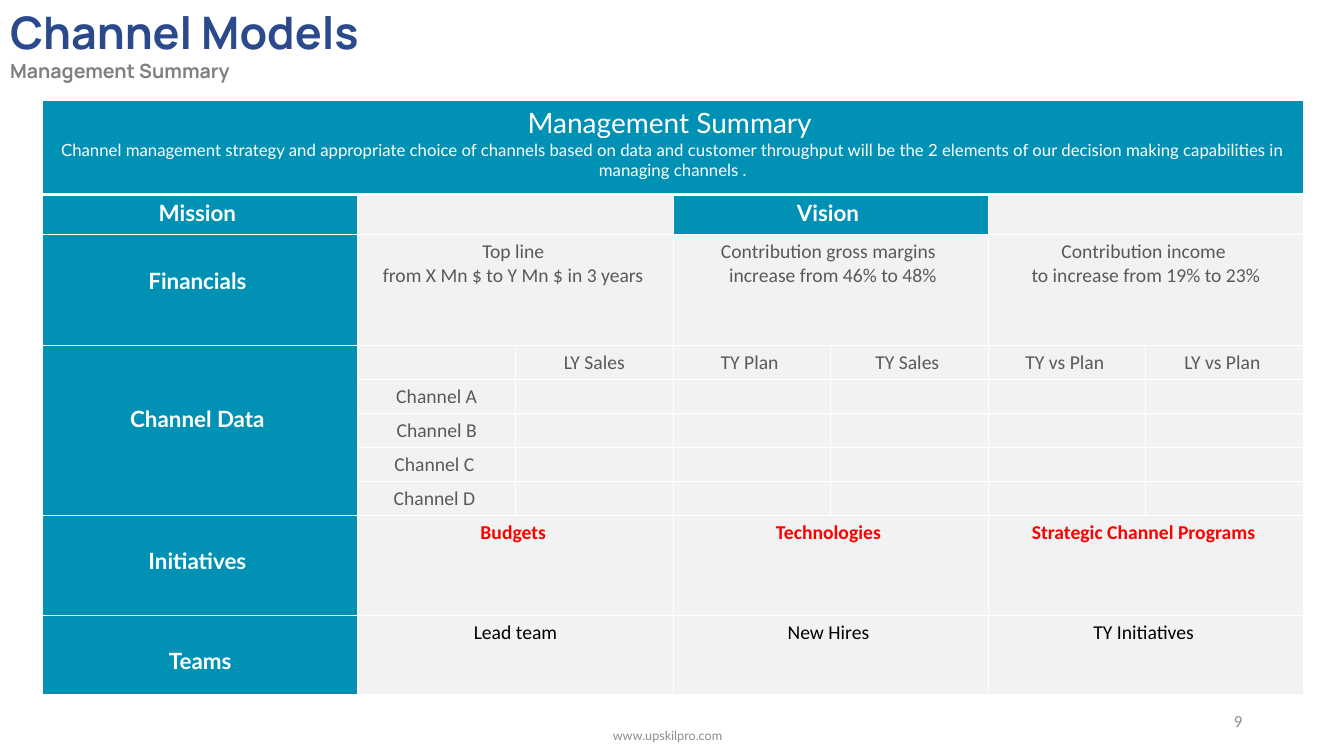
from dataclasses import dataclass

from lxml import etree
from pptx import Presentation
from pptx.dml.color import RGBColor
from pptx.enum.text import MSO_ANCHOR, MSO_AUTO_SIZE, PP_ALIGN
from pptx.oxml.ns import qn
from pptx.util import Inches, Pt

# Content
HEADING = "Channel Models"
SUBHEADING = "Management Summary"
SUMMARY = [
    ("Management Summary ", "summary_title"),
    ("Channel management strategy and appropriate choice of channels based on data "
     "and customer throughput will be the 2 elements of our decision making "
     "capabilities in managing channels .", "summary_text"),
]
FINANCIALS = [
    ["Top line ", "from X Mn $ to Y Mn $ in 3 years "],
    ["Contribution gross margins ", " increase from 46% to 48%"],
    ["Contribution income ", "to increase from 19% to 23%"],
]
MEASURES = [[], ["LY Sales"], ["TY Plan "], ["TY Sales "], ["TY vs Plan "], ["LY vs Plan "]]
CHANNELS = ["Channel A", "Channel B", "Channel C ", "Channel D "]
INITIATIVES = [["Budgets "], ["Technologies "], ["Strategic Channel Programs "]]
TEAMS = [["Lead team"], ["New Hires "], ["TY Initiatives "]]

# Row: height, label, lines above the label, text style, cells
ROWS = [
    (0.4, "Mission ", 0, "label", [[], ["Vision "], []]),
    (1.1, "Financials ", 1, "body", FINANCIALS),
    (0.33, "Channel Data ", 2, "body", MEASURES),
    *[(0.33, None, 0, "body", [[channel]] + [[]] * 5) for channel in CHANNELS],
    (0.99, "Initiatives ", 1, "initiative", INITIATIVES),
    (0.79, "Teams", 1, "team", TEAMS),
]
FOOTERS = [  # text, box, alignment, style
    ("9", (9.42, 6.95, 3, 0.4), PP_ALIGN.RIGHT, "page"),
    ("www.upskilpro.com", (4.37, 7.1, 4.5, 0.4), PP_ALIGN.CENTER, "site"),
]

# Layout in inches
TITLE_BOX = (0, 0, 7.71, 0.88)
TABLE_LEFT, TABLE_TOP, TABLE_WIDTH = 0.42, 1, 12.51
LABEL_WIDTH, DATA_COLUMNS = 3.13, 6
SUMMARY_HEIGHT = 0.93
CELL_MARGIN, LABEL_LINE = 0.05, 0.27


@dataclass(frozen=True)
class Theme:
    teal: str = "0091B5"
    pale: str = "F2F2F2"
    white: str = "FFFFFF"
    empty_size: int = 14


THEME = Theme()
STYLES = {  # font, size, colour, bold
    "heading": ("Manrope", 32, "2A4A8B", True),
    "subheading": ("Manrope", 14, "808080", True),
    "summary_title": ("Lato", 20, THEME.white, False),
    "summary_text": ("Lato", 12, THEME.white, False),
    "label": ("Lato", 16, THEME.white, True),
    "body": ("Calibri", 14, "595959", False),
    "initiative": ("Calibri", 14, "FF0000", True),
    "team": ("Calibri", 14, "000000", False),
    "page": ("Calibri", 12, "8C8C8C", False),
    "site": ("Lato", 9, "8C8C8C", False),
}


def write(frame, lines, align):
    """Write (text, style) pairs, one paragraph each."""
    for index, (text, style) in enumerate(lines):
        paragraph = frame.add_paragraph() if index else frame.paragraphs[0]
        paragraph.alignment = align
        run = paragraph.add_run()
        run.text = text
        font = run.font
        font.name, size, colour, font.bold = STYLES[style]
        font.size = Pt(size)
        font.color.rgb = RGBColor.from_string(colour)


def place(shape, box):
    shape.left, shape.top, shape.width, shape.height = map(Inches, box)


def prepare_cell(cell, bottom_width=1):
    """Give a cell white borders, a pale fill and a small empty line."""
    properties = cell._tc.get_or_add_tcPr()
    for side in ("lnL", "lnR", "lnT", "lnB"):
        width = bottom_width if side == "lnB" else 1
        line = etree.SubElement(properties, qn(f"a:{side}"), w=str(Pt(width)))
        fill = etree.SubElement(line, qn("a:solidFill"))
        etree.SubElement(fill, qn("a:srgbClr"), val=THEME.white)
    paint(cell, THEME.pale)
    etree.SubElement(cell.text_frame.paragraphs[0]._p, qn("a:endParaRPr"),
                     sz=str(THEME.empty_size * 100))


def paint(cell, colour):
    cell.fill.solid()
    cell.fill.fore_color.rgb = RGBColor.from_string(colour)


def add_summary_table(slide):
    heights = [SUMMARY_HEIGHT] + [row[0] for row in ROWS]
    table = slide.shapes.add_table(
        len(heights), DATA_COLUMNS + 1, Inches(TABLE_LEFT), Inches(TABLE_TOP),
        Inches(TABLE_WIDTH), Inches(sum(heights))).table
    table.first_row = table.horz_banding = False
    data_width = (TABLE_WIDTH - LABEL_WIDTH) / DATA_COLUMNS
    for index, column in enumerate(table.columns):
        column.width = Inches(data_width if index else LABEL_WIDTH)
    for index, height in enumerate(heights):
        table.rows[index].height = Inches(height)
        for column in range(DATA_COLUMNS + 1):
            prepare_cell(table.cell(index, column), 1 if index else 3)

    # Summary banner
    banner = table.cell(0, 0)
    banner.merge(table.cell(0, DATA_COLUMNS))
    paint(banner, THEME.teal)
    write(banner.text_frame, SUMMARY, PP_ALIGN.CENTER)

    # Labels and data cells
    for row, (_, label, drop, style, cells) in enumerate(ROWS, start=1):
        heading = table.cell(row, 0)
        paint(heading, THEME.teal)
        if label:
            heading.margin_top = Inches(CELL_MARGIN + drop * LABEL_LINE)
            write(heading.text_frame, [(label, "label")], PP_ALIGN.CENTER)
        if cells is MEASURES:
            heading.merge(table.cell(row + len(CHANNELS), 0))
        span = DATA_COLUMNS // len(cells)
        for index, lines in enumerate(cells):
            column = 1 + index * span
            cell = table.cell(row, column)
            if span > 1:
                cell.merge(table.cell(row, column + span - 1))
            if lines and style == "label":
                paint(cell, THEME.teal)
            write(cell.text_frame, [(line, style) for line in lines], PP_ALIGN.CENTER)


def main():
    deck = Presentation()
    deck.slide_width, deck.slide_height = Inches(13.33), Inches(7.5)
    slide = deck.slides.add_slide(deck.slide_layouts[5])

    # Title
    title = slide.shapes.title
    place(title, TITLE_BOX)
    title.text_frame.vertical_anchor = MSO_ANCHOR.TOP
    title.text_frame.auto_size = MSO_AUTO_SIZE.NONE
    write(title.text_frame, [(HEADING, "heading"), (SUBHEADING, "subheading")],
          PP_ALIGN.LEFT)

    add_summary_table(slide)

    # Page number and site
    for text, box, align, style in FOOTERS:
        footer = slide.shapes.add_textbox(*map(Inches, box)).text_frame
        footer.word_wrap = True
        footer.vertical_anchor = MSO_ANCHOR.MIDDLE
        write(footer, [(text, style)], align)

    deck.save("out.pptx")


if __name__ == "__main__":
    main()
